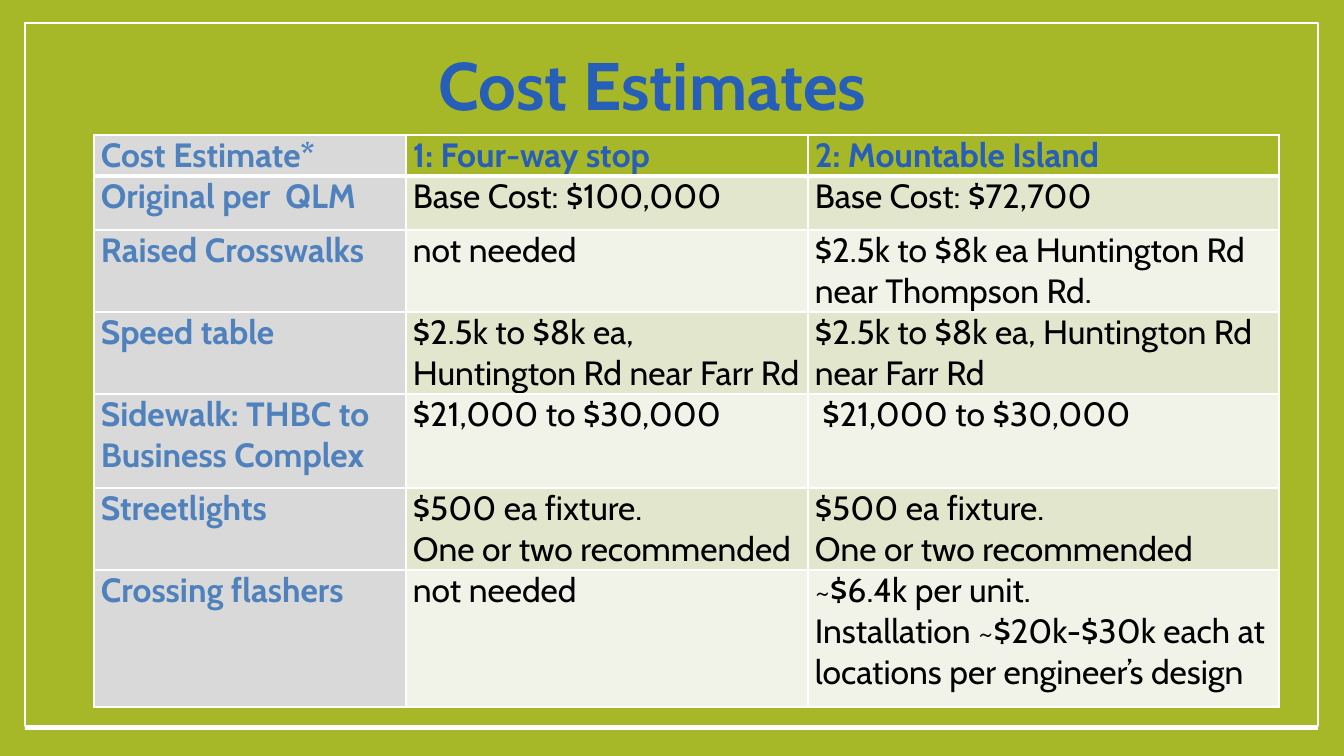
from lxml import etree
from pptx import Presentation
from pptx.dml.color import RGBColor
from pptx.enum.shapes import MSO_SHAPE
from pptx.enum.text import MSO_ANCHOR, PP_ALIGN
from pptx.oxml.ns import qn
from pptx.util import Emu, Pt

RECTANGLE = MSO_SHAPE.RECTANGLE
BOTTOM = MSO_ANCHOR.BOTTOM
CENTER = PP_ALIGN.CENTER

FONT = "Cabin"
COLORS = {
    "green": "A6B727",
    "white": "FFFFFF",
    "black": "000000",
    "title": "275EB7",
    "label": "4F81BD",
    "label_fill": "D9D9D9",
    "odd_row": "E1E6CD",
    "even_row": "F1F3E8",
}

COLUMN_WIDTHS = [312, 402, 471]
ROW_HEIGHTS = [41, 54, 82, 82, 94, 82, 137]
ROWS = [
    ["Cost Estimate*", "1: Four-way stop", "2: Mountable Island"],
    ["Original per  QLM", "Base Cost: $100,000", "Base Cost: $72,700"],
    ["Raised Crosswalks", "not needed",
     "$2.5k to $8k ea Huntington Rd near Thompson Rd."],
    ["Speed table", "$2.5k to $8k ea,\nHuntington Rd near Farr Rd",
     "$2.5k to $8k ea, Huntington Rd near Farr Rd"],
    ["Sidewalk: THBC to Business Complex", "$21,000 to $30,000",
     " $21,000 to $30,000"],
    ["Streetlights", "$500 ea fixture.\nOne or two recommended",
     "$500 ea fixture.\nOne or two recommended"],
    ["Crossing flashers", "not needed",
     "~$6.4k per unit.\nInstallation ~$20k-$30k each at locations per engineer’s design"],
]


def px(length):
    return Emu(round(length * 914400 / 100.8))


def add_text(para, text, size, color, bold):
    for number, line in enumerate(text.split("\n")):
        if number:
            para.add_line_break()
        span = para.add_run()
        span.text = line
        span.font.name = FONT
        span.font.size = Pt(size)
        span.font.bold = bold
        span.font.color.rgb = RGBColor.from_string(COLORS[color])


deck = Presentation()
deck.slide_width, deck.slide_height = px(1344), px(756)
page = deck.slides.add_slide(deck.slide_layouts[6])
page.background.fill.solid()
page.background.fill.fore_color.rgb = RGBColor.from_string(COLORS["green"])

# Framed panel: a white sheet peeks out below the green one
for top, fill in [(27, "white"), (23, "green")]:
    panel = page.shapes.add_shape(RECTANGLE, px(25), px(top), px(1293), px(703))
    panel.shadow.inherit = False
    panel.fill.solid()
    panel.fill.fore_color.rgb = RGBColor.from_string(COLORS[fill])
    panel.line.fill.background()
panel.line.color.rgb = RGBColor.from_string(COLORS["white"])
panel.line.width = Pt(1)

# Title
title = page.shapes.add_textbox(px(75), px(40), px(1155), px(89))
title.text_frame.word_wrap = True
title.text_frame.vertical_anchor = BOTTOM
para = title.text_frame.paragraphs[0]
para.alignment = CENTER
para.line_spacing = 0.85
add_text(para, "Cost Estimates", 48, "title", True)

# Cost table
table = page.shapes.add_table(
    len(ROWS), len(COLUMN_WIDTHS), px(94), px(135),
    px(sum(COLUMN_WIDTHS)), px(sum(ROW_HEIGHTS))).table
for column, width in zip(table.columns, COLUMN_WIDTHS):
    column.width = px(width)
for row, height in zip(table.rows, ROW_HEIGHTS):
    row.height = px(height)

for r, texts in enumerate(ROWS):
    for c, text in enumerate(texts):
        cell = table.cell(r, c)
        cell.margin_left = cell.margin_right = px(7)
        cell.margin_top = cell.margin_bottom = 0

        # Borders: the rule under the header is thicker
        properties = cell._tc.get_or_add_tcPr()
        for side in ("lnL", "lnR", "lnT", "lnB"):
            thick = (r, side) in [(0, "lnB"), (1, "lnT")]
            border = etree.SubElement(properties, qn("a:" + side),
                                      w=str(Pt(3 if thick else 1)))
            solid = etree.SubElement(border, qn("a:solidFill"))
            etree.SubElement(solid, qn("a:srgbClr"), val=COLORS["white"])

        # Fill and text colour follow the column, the header and the banding
        if c == 0:
            fill, color = "label_fill", "label"
        elif r == 0:
            fill, color = "green", "title"
        else:
            fill, color = ("odd_row" if r % 2 else "even_row"), "black"
        cell.fill.solid()
        cell.fill.fore_color.rgb = RGBColor.from_string(COLORS[fill])
        para = cell.text_frame.paragraphs[0]
        para.space_after = Pt(6)
        add_text(para, text, 24, color, r == 0 or c == 0)

deck.save("out.pptx")
